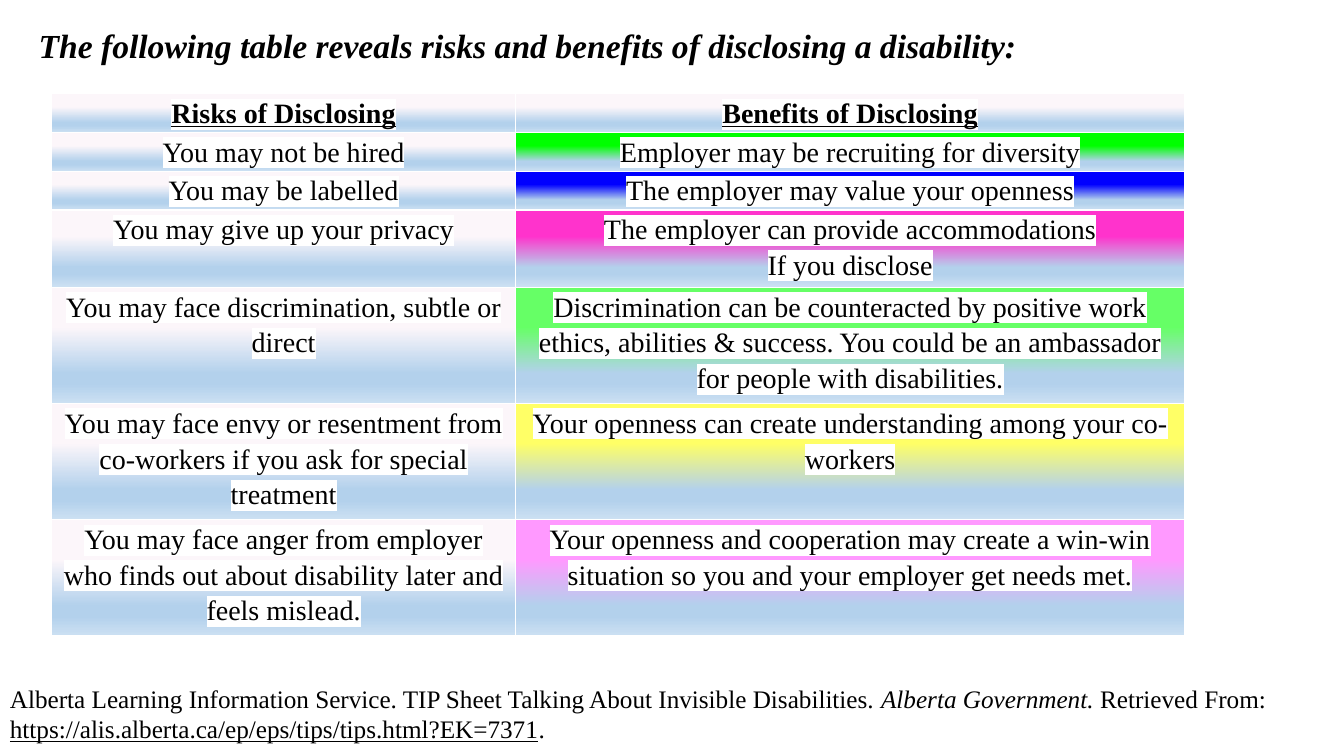
"""Build a slide with a table of the risks and benefits of disclosing a disability."""
from lxml.etree import SubElement
from pptx import Presentation
from pptx.dml.color import RGBColor
from pptx.enum.text import PP_ALIGN
from pptx.oxml.ns import qn
from pptx.util import Pt

BLACK = RGBColor(0, 0, 0)
WHITE = RGBColor(255, 255, 255)
PALE = RGBColor(0xFC, 0xF6, 0xFA)
BLUE = RGBColor(0xB3, 0xD1, 0xEC)
LIGHT_BLUE = RGBColor(0xCC, 0xE0, 0xF2)
FONT = "Times New Roman"

TITLE = "The following table reveals risks and benefits of disclosing a disability:"
ROWS = [
    ("Risks of Disclosing", ["Benefits of Disclosing"], PALE, 1),
    ("You may not be hired", ["Employer may be recruiting for diversity"],
     RGBColor(0, 255, 0), 1),
    ("You may be labelled", ["The employer may value your openness"],
     RGBColor(0, 0, 255), 1),
    ("You may give up your privacy",
     ["The employer can provide accommodations", "If you disclose"],
     RGBColor(0xFF, 0x33, 0xCC), 2),
    ("You may face discrimination, subtle or direct",
     ["Discrimination can be counteracted by positive work ethics, abilities & success. "
      "You could be an ambassador for people with disabilities."],
     RGBColor(0x66, 0xFF, 0x66), 3),
    ("You may face envy or resentment from co-workers if you ask for special treatment",
     ["Your openness can create understanding among your co-workers"],
     RGBColor(0xFF, 0xFF, 0x66), 3),
    ("You may face anger from employer who finds out about disability later and feels mislead.",
     ["Your openness and cooperation may create a win-win situation "
      "so you and your employer get needs met."],
     RGBColor(0xFF, 0x99, 0xFF), 3),
]
SOURCE = [
    ("Alberta Learning Information Service. TIP Sheet Talking About Invisible Disabilities. ", {}),
    ("Alberta Government. ", {"italic": True}),
    ("Retrieved From: ", {}),
    ("https://alis.alberta.ca/ep/eps/tips/tips.html?EK=7371", {"underline": True}),
    (".", {}),
]
COLUMN_WIDTHS = (331.2, 478.1)
LINE_HEIGHT = 27.67


def add_span(para, text, size=18, bold=False, italic=False, underline=False, highlight=None):
    span = para.add_run()
    span.text = text
    font = span.font
    font.name, font.size, font.bold = FONT, Pt(size), bold
    font.italic, font.underline = italic, underline
    font.color.rgb = BLACK
    if highlight is not None:
        props = span._r.get_or_add_rPr()
        mark = SubElement(props, qn("a:highlight"))
        SubElement(mark, qn("a:srgbClr"), val=str(highlight))
        props.find(qn("a:solidFill")).addnext(mark)


def add_text(page, left, top, width, height, spans):
    box = page.shapes.add_textbox(Pt(left), Pt(top), Pt(width), Pt(height))
    box.text_frame.word_wrap = True
    for text, style in spans:
        add_span(box.text_frame.paragraphs[0], text, **style)


def paint_cell(cell, color):
    props = cell._tc.get_or_add_tcPr()
    for side in ("lnL", "lnR", "lnT", "lnB"):
        border = SubElement(props, qn(f"a:{side}"), w=str(Pt(1)))
        fill = SubElement(border, qn("a:solidFill"))
        SubElement(fill, qn("a:srgbClr"), val=str(WHITE))
    gradient = SubElement(props, qn("a:gradFill"), rotWithShape="1")
    stops = SubElement(gradient, qn("a:gsLst"))
    for percent, shade in ((0, color), (34, color), (74, BLUE), (83, BLUE), (100, LIGHT_BLUE)):
        stop = SubElement(stops, qn("a:gs"), pos=str(percent * 1000))
        SubElement(stop, qn("a:srgbClr"), val=str(shade))
    SubElement(gradient, qn("a:lin"), ang="5400000", scaled="0")


def fill_cell(cell, lines, color, header):
    cell.margin_left = cell.margin_right = Pt(5.4)
    cell.margin_top = cell.margin_bottom = Pt(0)
    frame = cell.text_frame
    for index, line in enumerate(lines):
        para = frame.add_paragraph() if index else frame.paragraphs[0]
        para.alignment = PP_ALIGN.CENTER
        para.line_spacing = 1.15
        add_span(para, line, size=20, bold=header, underline=header, highlight=WHITE)
    paint_cell(cell, color)


def add_comparison(page):
    height = LINE_HEIGHT * sum(row[3] for row in ROWS)
    table = page.shapes.add_table(len(ROWS), 2, Pt(37), Pt(67), Pt(sum(COLUMN_WIDTHS)),
                                  Pt(height)).table
    table.first_row = table.horz_banding = False
    for column, width in zip(table.columns, COLUMN_WIDTHS):
        column.width = Pt(width)
    for index, (risk, benefit, color, lines) in enumerate(ROWS):
        table.rows[index].height = Pt(LINE_HEIGHT * lines)
        fill_cell(table.cell(index, 0), [risk], PALE, index == 0)
        fill_cell(table.cell(index, 1), benefit, color, index == 0)


def main():
    deck = Presentation()
    deck.slide_width, deck.slide_height = Pt(960), Pt(540)
    page = deck.slides.add_slide(deck.slide_layouts[6])
    add_text(page, 20.5, 14.4, 900, 36, [(TITLE, {"size": 24, "bold": True, "italic": True})])
    add_comparison(page)
    add_text(page, 0, 484.5, 921, 50, SOURCE)
    deck.save("out.pptx")


if __name__ == "__main__":
    main()
